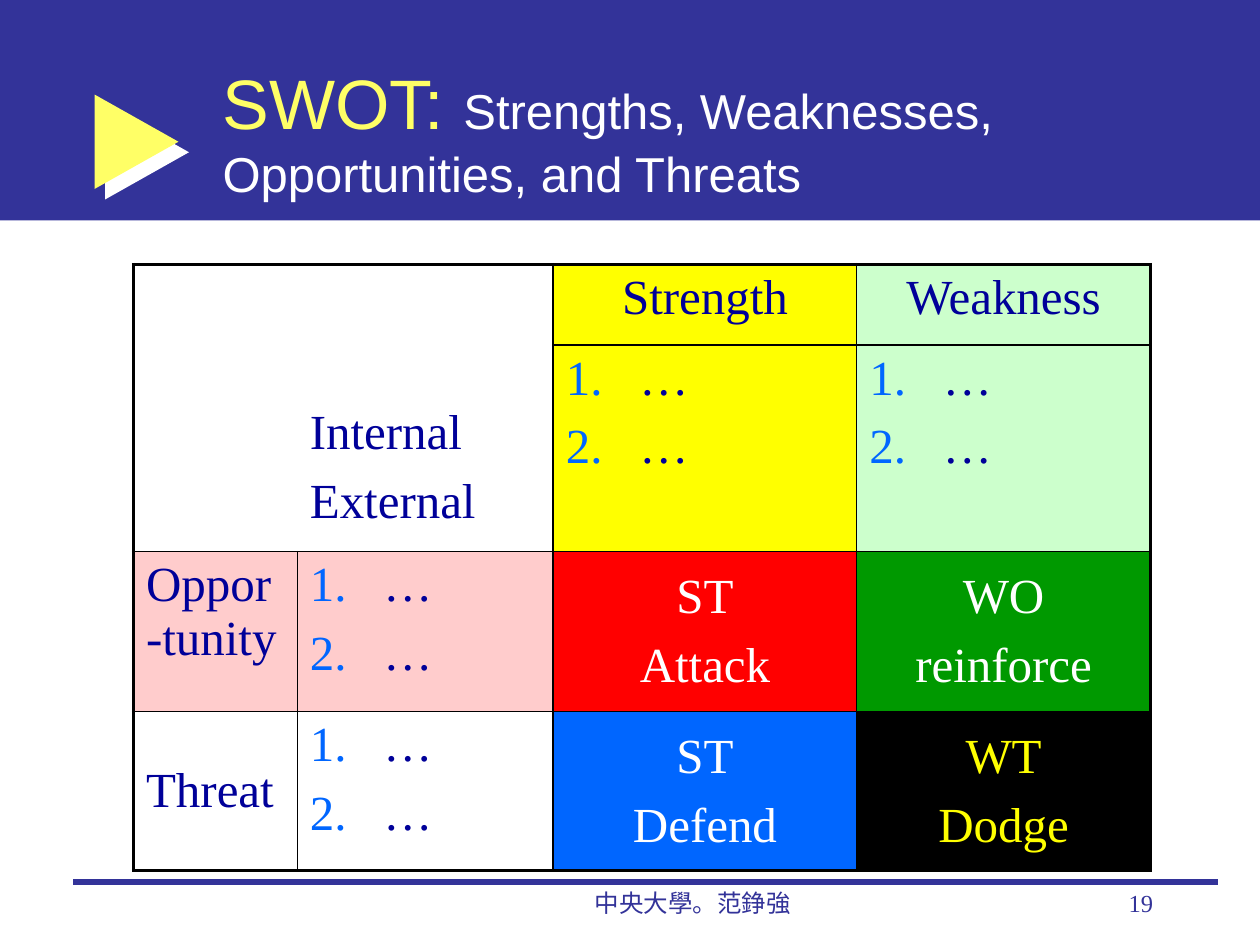
from lxml import etree
from pptx import Presentation
from pptx.dml.color import RGBColor
from pptx.enum import shapes as kinds, text as txt
from pptx.oxml import parse_xml
from pptx.oxml.ns import nsdecls, qn
from pptx.util import Pt

INDIGO = RGBColor(0x33, 0x33, 0x99)
LEMON = RGBColor(0xFF, 0xFF, 0x66)
WHITE = RGBColor(0xFF, 0xFF, 0xFF)
BLACK = RGBColor(0, 0, 0)
NAVY = RGBColor(0, 0, 0x99)
YELLOW = RGBColor(0xFF, 0xFF, 0)
MINT = RGBColor(0xCC, 0xFF, 0xCC)
PINK = RGBColor(0xFF, 0xCC, 0xCC)
RED = RGBColor(0xFF, 0, 0)
GREEN = RGBColor(0, 0x99, 0)
BLUE = RGBColor(0, 0x66, 0xFF)

SANS, SERIF = "Arial", "Times New Roman"
LEFT, CENTER, RIGHT = (txt.PP_ALIGN.LEFT, txt.PP_ALIGN.CENTER, txt.PP_ALIGN.RIGHT)
TOP, MIDDLE, BOTTOM = (txt.MSO_ANCHOR.TOP, txt.MSO_ANCHOR.MIDDLE, txt.MSO_ANCHOR.BOTTOM)

TITLE = [("SWOT: ", 40, LEMON),
         ("Strengths, Weaknesses, Opportunities, and Threats", 28, WHITE)]
# text, alignment, left, width
FOOTERS = [("中央大學。范錚強", CENTER, 282, 228), ("19", RIGHT, 516, 150)]

STYLES = {
    "label": dict(align=LEFT, anchor=TOP, color=NAVY),
    "axes": dict(align=LEFT, anchor=BOTTOM, color=NAVY, bottom=13),
    "heading": dict(align=CENTER, anchor=TOP, color=NAVY),
    "list": dict(align=LEFT, anchor=TOP, color=NAVY, numbered=True),
    "side": dict(align=LEFT, anchor=MIDDLE, color=NAVY),
    "strategy": dict(align=CENTER, anchor=MIDDLE, color=WHITE),
    "dodge": dict(align=CENTER, anchor=MIDDLE, color=YELLOW),
}
ITEMS = ["…", "…"]
# lines, style, fill
SWOT = [
    [([], "label", None), ([], "label", None),
     (["Strength"], "heading", YELLOW), (["Weakness"], "heading", MINT)],
    [([], "label", None), (["Internal", "External"], "axes", None),
     (ITEMS, "list", YELLOW), (ITEMS, "list", MINT)],
    [(["Oppor-tunity"], "label", PINK), (ITEMS, "list", PINK),
     (["ST", "Attack"], "strategy", RED), (["WO", "reinforce"], "strategy", GREEN)],
    [(["Threat"], "side", WHITE), (ITEMS, "list", WHITE),
     (["ST", "Defend"], "strategy", BLUE), (["WT", "Dodge"], "dodge", BLACK)],
]
COLUMNS = [93.6, 146.2, 173.5, 167.8]
ROWS = [46, 118, 91.5, 90.7]
CORNER = 2  # the open top-left block spans this many rows and columns


def add_run(paragraph, words, size, color, face):
    run = paragraph.add_run()
    run.text = words
    for name, value in dict(name=face, size=Pt(size)).items():
        setattr(run.font, name, value)
    run.font.color.rgb = color


def number(paragraph):
    """Give the paragraph a blue automatic number and a hanging indent."""
    props = paragraph._p.get_or_add_pPr()
    indent = Pt(42)
    props.set("marL", str(indent))
    props.set("indent", str(-indent))
    color = etree.SubElement(props, qn("a:buClr"))
    etree.SubElement(color, qn("a:srgbClr"), val=str(BLUE))
    etree.SubElement(props, qn("a:buFont"), typeface="+mj-lt")
    etree.SubElement(props, qn("a:buAutoNum"), type="arabicPeriod")


def fill_cell(cell, lines, align, anchor, color, bottom=3.6, numbered=False):
    cell.vertical_anchor = anchor
    cell.margin_bottom = Pt(bottom)
    frame = cell.text_frame
    for i, line in enumerate(lines):
        paragraph = frame.add_paragraph() if i else frame.paragraphs[0]
        if numbered:
            number(paragraph)
        paragraph.alignment = align
        if i:
            paragraph.space_before = Pt(8.4)
        add_run(paragraph, line, 28, color, SERIF)


def draw_borders(cell, row, col):
    """Thick outer frame, thin inner rules, none inside the corner block."""
    props = cell._tc.get_or_add_tcPr()
    last_row, last_col = len(ROWS) - 1, len(COLUMNS) - 1
    in_corner = row < CORNER and col < CORNER
    sides = [
        ("lnL", col == 0, in_corner and col > 0),
        ("lnR", col == last_col, in_corner and col < CORNER - 1),
        ("lnT", row == 0, in_corner and row > 0),
        ("lnB", row == last_row, in_corner and row < CORNER - 1),
    ]
    for place, (tag, outer, hidden) in enumerate(sides):
        paint = ("<a:noFill/>" if hidden else
                 f'<a:solidFill><a:srgbClr val="{BLACK}"/></a:solidFill>')
        width = Pt(2.25 if outer else 1)
        props.insert(place, parse_xml(
            f'<a:{tag} {nsdecls("a")} w="{width}">{paint}</a:{tag}>'))


def add_swot(slide):
    table = slide.shapes.add_table(len(ROWS), len(COLUMNS), Pt(76.3), Pt(151.2),
                                   Pt(sum(COLUMNS)), Pt(sum(ROWS))).table
    table.first_row = table.horz_banding = False
    for column, width in zip(table.columns, COLUMNS):
        column.width = Pt(width)
    for r, (height, contents) in enumerate(zip(ROWS, SWOT)):
        table.rows[r].height = Pt(height)
        for c, (lines, style, fill) in enumerate(contents):
            cell = table.cell(r, c)
            if fill is None:
                cell.fill.background()
            else:
                cell.fill.solid()
                cell.fill.fore_color.rgb = fill
            fill_cell(cell, lines, **STYLES[style])
            draw_borders(cell, r, c)


def add_filled(slide, kind, box, color):
    shape = slide.shapes.add_shape(kind, *map(Pt, box))
    shape.shadow.inherit = False
    shape.fill.solid()
    shape.fill.fore_color.rgb = color
    shape.line.fill.background()
    return shape


def add_header(slide):
    band = add_filled(slide, kinds.MSO_SHAPE.RECTANGLE, (0, 0, 720, 126), INDIGO)
    arrow = add_filled(slide, kinds.MSO_SHAPE.RIGHT_ARROW, (54, 54, 48, 54), LEMON)
    arrow.adjustments[0], arrow.adjustments[1] = 0.384, 1
    effects = arrow._element.spPr.find(qn("a:effectLst"))
    shadow = etree.SubElement(effects, qn("a:outerShdw"), dist=str(Pt(8.5)),
                              dir=str(45 * 60000), algn="ctr", rotWithShape="0")
    etree.SubElement(shadow, qn("a:srgbClr"), val=str(WHITE))

    title = slide.shapes.title
    title._element.addprevious(band._element)
    title.left, title.top, title.width, title.height = map(Pt, (120, 30, 546, 90))
    frame = title.text_frame
    for name, value in dict(word_wrap=True, vertical_anchor=MIDDLE,
                            auto_size=txt.MSO_AUTO_SIZE.NONE).items():
        setattr(frame, name, value)
    paragraph = frame.paragraphs[0]
    paragraph.alignment = LEFT
    for words, size, color in TITLE:
        add_run(paragraph, words, size, color, SANS)


def add_footer(slide):
    rule = slide.shapes.add_connector(kinds.MSO_CONNECTOR.STRAIGHT,
                                      Pt(42), Pt(504), Pt(696), Pt(504))
    rule.line.color.rgb = INDIGO
    rule.line.width = Pt(3)
    etree.SubElement(rule._element.spPr, qn("a:effectLst"))
    for words, align, left, width in FOOTERS:
        frame = slide.shapes.add_textbox(Pt(left), Pt(504), Pt(width), Pt(36)).text_frame
        frame.word_wrap = True
        frame.paragraphs[0].alignment = align
        add_run(frame.paragraphs[0], words, 14, INDIGO, SERIF)


def main():
    deck = Presentation()
    deck.slide_width, deck.slide_height = Pt(720), Pt(540)
    slide = deck.slides.add_slide(deck.slide_layouts[5])
    add_header(slide)
    add_footer(slide)
    add_swot(slide)
    deck.save("out.pptx")


if __name__ == "__main__":
    main()
